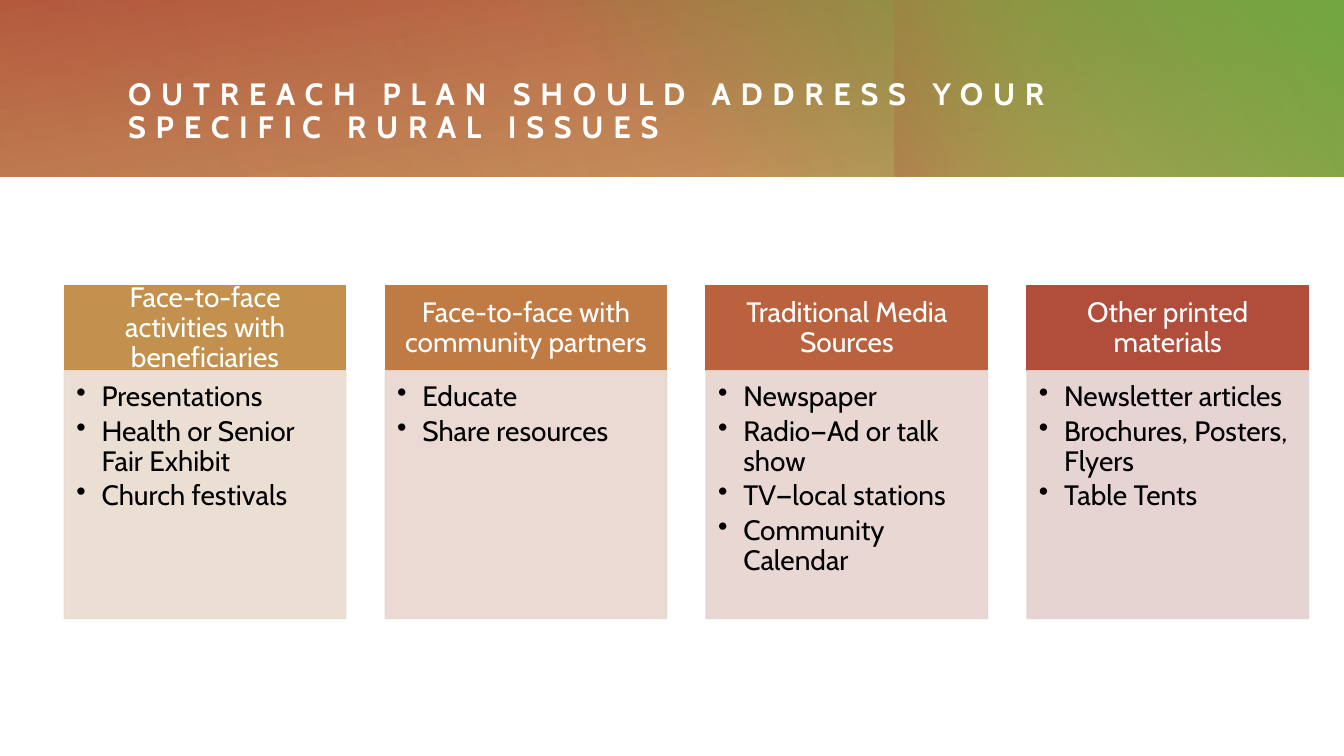
from lxml import etree
from pptx import Presentation
from pptx.dml.color import RGBColor
from pptx.enum import shapes, text
from pptx.oxml.ns import qn
from pptx.util import Pt

TITLE = "OUTREACH PLAN SHOULD ADDRESS YOUR SPECIFIC RURAL ISSUES"
COLUMNS = [
    ("Face-to-face activities with beneficiaries",
     ["Presentations", "Health or Senior Fair Exhibit", "Church festivals"]),
    ("Face-to-face with community partners",
     ["Educate", "Share resources"]),
    ("Traditional Media Sources",
     ["Newspaper", "Radio—Ad or talk show", "TV—local stations", "Community Calendar"]),
    ("Other printed materials",
     ["Newsletter articles", "Brochures, Posters, Flyers", "Table Tents"]),
]
COLORS = {
    "tan": "C3914D", "red": "B14D3B", "green": "50B13B", "olive": "A6A537",
    "white": "FFFFFF", "black": "000000",
    "head0": "C3914D", "head1": "C07A44", "head2": "BA623E", "head3": "B14D3B",
    "body0": "E9DCD0", "body1": "E8D7CF", "body2": "E6D3CF", "body3": "E4D0CE",
}
FONT = "Cabin"
# box, rotation, clockwise gradient angle, stops of (position %, colour, opacity %)
BANDS = [
    ((0, 0, 960, 126), 0, 260, [(0, "tan", 83), (100, "red", 100)]),
    ((346.5, 0.5, 613.5, 125.5), 0, 310, [(22, "green", 0), (99, "green", 100)]),
    ((710.5, -71.5, 126, 269.5), 270, 250, [(45, "olive", 0), (99, "red", 33)]),
    ((193, 0, 766.5, 126), 180, 330, [(0, "tan", 30), (99, "tan", 0)]),
    ((0, 0, 623, 126), 0, 340, [(0, "tan", 21), (99, "tan", 0)]),
]
LEFT, PITCH, WIDTH = 46, 229.2, 201
TOP, HEAD_H, BODY_H = 204, 60.8, 177


def rgb(name):
    return RGBColor.from_string(COLORS[name])


def set_alpha(clr, percent):
    etree.SubElement(clr, qn("a:alpha")).set("val", str(percent * 1000))


def add_rect(box):
    sp = slide.shapes.add_shape(shapes.MSO_SHAPE.RECTANGLE, *map(Pt, box))
    sp.shadow.inherit = False
    return sp


def add_panel(box, color, opacity=100):
    sp = add_rect(box)
    sp.fill.solid()
    sp.fill.fore_color.rgb = rgb(color)
    sp.line.color.rgb = rgb(color)
    sp.line.width = Pt(1)
    if opacity < 100:
        for clr in sp._element.spPr.iter(qn("a:srgbClr")):
            set_alpha(clr, opacity)
    return sp


def write(sp, lines, size=20, color="black", bold=False, align=text.PP_ALIGN.LEFT,
          anchor=text.MSO_ANCHOR.MIDDLE, insets=(0, 0, 0, 0), after=0,
          bullet=False, spacing=0):
    tf = sp.text_frame
    tf.word_wrap = True
    tf.auto_size = text.MSO_AUTO_SIZE.NONE
    tf.vertical_anchor = anchor
    tf.margin_left, tf.margin_top, tf.margin_right, tf.margin_bottom = map(Pt, insets)
    for i, line in enumerate(lines):
        p = tf.add_paragraph() if i else tf.paragraphs[0]
        p.alignment = align
        p.line_spacing = 0.9
        p.space_before, p.space_after = Pt(0), Pt(after)
        if bullet:
            pPr = p._p.get_or_add_pPr()
            pPr.set("marL", str(Pt(18)))
            pPr.set("indent", str(-Pt(18)))
            etree.SubElement(pPr, qn("a:buChar")).set("char", "•")
        r = p.add_run()
        r.text = line
        r.font.name, r.font.size, r.font.bold = FONT, Pt(size), bold
        r.font.color.rgb = rgb(color)
        if spacing:
            r.font._element.set("spc", str(spacing * 100))


prs = Presentation()
prs.slide_width, prs.slide_height = Pt(960), Pt(540)
slide = prs.slides.add_slide(prs.slide_layouts[5])

# Layered gradient header
for box, rotation, angle, stops in BANDS:
    sp = add_rect(box)
    sp.rotation = rotation
    sp.line.fill.background()
    sp.fill.gradient()
    sp.fill.gradient_angle = 360 - angle
    for stop, (position, color, opacity) in zip(sp.fill.gradient_stops, stops):
        stop.position = position / 100
        stop.color.rgb = rgb(color)
    for clr, (position, color, opacity) in zip(sp._element.spPr.iter(qn("a:srgbClr")), stops):
        set_alpha(clr, opacity)

# Title, brought in front of the header
title = slide.shapes.title
title.left, title.top, title.width, title.height = map(Pt, (91.5, 42, 817, 76))
write(title, [TITLE], size=22, color="white", bold=True, spacing=7)
slide.shapes._spTree.append(title._element)

# Four columns: heading over bulleted list
for i, (heading, items) in enumerate(COLUMNS):
    x = LEFT + i * PITCH
    head = add_panel((x, TOP, WIDTH, HEAD_H), f"head{i}")
    write(head, [heading], color="white", align=text.PP_ALIGN.CENTER,
          insets=(11.5, 6.5, 11.5, 6.5))
    body = add_panel((x, TOP + HEAD_H, WIDTH, BODY_H), f"body{i}", opacity=90)
    write(body, items, anchor=text.MSO_ANCHOR.TOP, insets=(8.5, 8.5, 11.5, 12),
          after=3, bullet=True)

prs.save("out.pptx")
